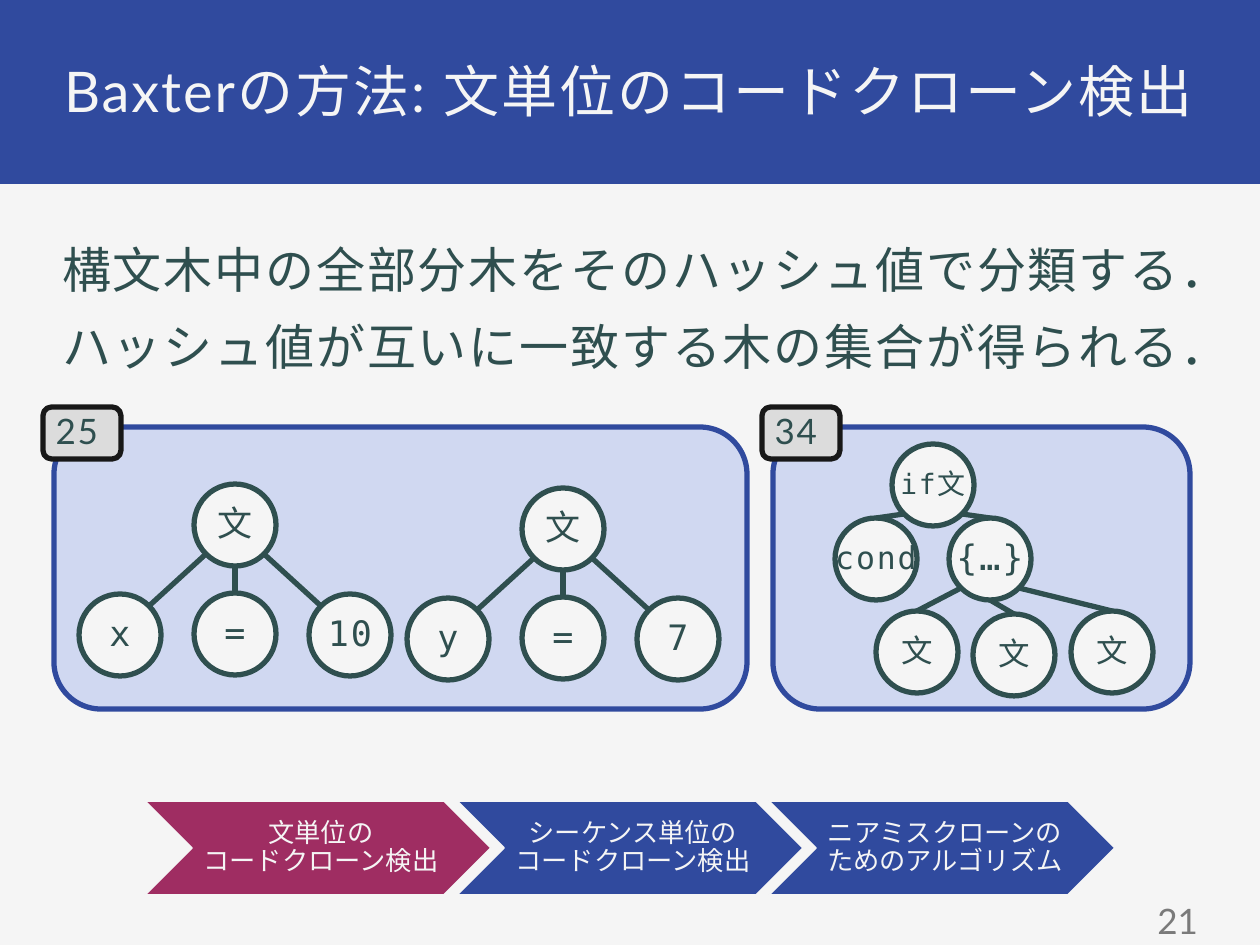
from dataclasses import dataclass

from lxml import etree
from pptx import Presentation
from pptx.dml.color import RGBColor
from pptx.enum import shapes, text
from pptx.oxml.ns import qn
from pptx.util import Emu, Pt

PX = 914400 / 126


@dataclass(frozen=True)
class Theme:
    paper: str = "F5F5F5"
    blue: str = "304A9E"
    panel: str = "D0D8F1"
    tag: str = "DCDCDC"
    tag_edge: str = "181818"
    ink: str = "2F4F4F"
    accent: str = "9F2D62"
    grey: str = "7A7A7A"
    sans: str = "Lato"
    mono: str = "DejaVu Sans Mono"
    title: int = 32
    body: int = 28
    label: int = 20
    step: int = 15


theme = Theme()
KIND = shapes.MSO_SHAPE
ALIGN = text.PP_ALIGN
ANCHOR = text.MSO_ANCHOR

deck = Presentation()
deck.slide_width, deck.slide_height = Emu(int(1260 * PX)), Emu(int(945 * PX))
page = deck.slides.add_slide(deck.slide_layouts[6])
page.background.fill.solid()
page.background.fill.fore_color.rgb = RGBColor.from_string(theme.paper)


def add_box(kind, area, fill=None, edge=None, weight=3):
    """Add a preset shape, or a text box when kind is None."""
    left, top, width, height = [Emu(round(v * PX)) for v in area]
    if kind is None:
        return page.shapes.add_textbox(left, top, width, height)
    box = page.shapes.add_shape(kind, left, top, width, height)
    box.shadow.inherit = False
    box.fill.solid()
    box.fill.fore_color.rgb = RGBColor.from_string(fill)
    if edge:
        box.line.color.rgb = RGBColor.from_string(edge)
        box.line.width = Pt(weight)
    else:
        box.line.fill.background()
    return box


def write(box, lines, size, color, font=theme.sans, align=ALIGN.LEFT, anchor=ANCHOR.MIDDLE,
          wrap=False, insets=(10, 10, 10, 10), before=0, leading=0.9, tracking=110):
    """Write one paragraph per line into the box."""
    frame = box.text_frame
    frame.word_wrap, frame.vertical_anchor = wrap, anchor
    (frame.margin_left, frame.margin_top,
     frame.margin_right, frame.margin_bottom) = [Emu(round(v * PX)) for v in insets]
    for index, line in enumerate(lines):
        para = frame.paragraphs[0] if index == 0 else frame.add_paragraph()
        para.text = line
        para.alignment, para.line_spacing = align, leading
        para.space_before = Pt(before)
        para.font.name, para.font.size = font, Pt(size)
        para.font.color.rgb = RGBColor.from_string(color)
        para._p.get_or_add_pPr().set("hangingPunct", "1")
        for span in para.runs:
            span._r.get_or_add_rPr().set("spc", str(tracking))


# Title band
add_box(KIND.RECTANGLE, (-2, -2, 1264, 186), theme.blue)
write(add_box(None, (54, 54, 1150, 74)), ["Baxterの方法: 文単位のコードクローン検出"],
      theme.title, theme.paper, align=ALIGN.JUSTIFY, anchor=ANCHOR.TOP, wrap=True,
      insets=(10, 10, 10, 8), before=16)

# Explanation
write(add_box(None, (54, 238, 1150, 653)),
      ["構文木中の全部分木をそのハッシュ値で分類する．",
       "ハッシュ値が互いに一致する木の集合が得られる．"],
      theme.body, theme.ink, anchor=ANCHOR.TOP, wrap=True, insets=(8, 8, 8, 8), before=14)

# Hash buckets, each with its value on the corner
for value, left, width in [("25", 54, 693), ("34", 773, 417)]:
    add_box(KIND.ROUNDED_RECTANGLE, (left, 427, width, 282), theme.panel, theme.blue)
    tag = add_box(KIND.ROUNDED_RECTANGLE, (left - 11, 407, 78, 52), theme.tag, theme.tag_edge)
    write(tag, [value], theme.label, theme.ink, before=3)

# Syntax trees: label, size, left, top, parent, side of parent, side of child
# Sides: -1 left diagonal, 0 middle, 1 right diagonal
NODE = 82
DIAGONAL = 29
trees = []
for name, number, left, top in [("x", "10", 194, 484), ("y", "7", 522, 488)]:
    trees.append([
        ("文", 20, left, top, None, 0, 0),
        (name, 20, left - 115, top + 110, 0, -1, 1),
        ("=", 20, left, top + 109, 0, 0, 0),
        (number, 20, left + 115, top + 110, 0, 1, -1),
    ])
trees.append([
    ("if文", 16, 892, 444, None, 0, 0),
    ("cond", 18, 835, 518, 0, -1, 0),
    ("{…}", 20, 949, 518, 0, 1, 0),
    ("文", 18, 876, 611, 2, -1, 0),
    ("文", 18, 973, 614, 2, 0, 0),
    ("文", 18, 1071, 611, 2, 1, 0),
])
for tree in trees:
    for label, size, left, top, *_ in tree:
        node = add_box(KIND.OVAL, (left, top, NODE, NODE), theme.paper, theme.ink)
        write(node, [label], size, theme.ink, theme.mono, ALIGN.CENTER, before=3)
    for _, _, left, top, parent, out, into in tree:
        if parent is None:
            continue
        ends = []
        for x, y, side, down in [(left, top, into, -1), (*tree[parent][2:4], out, 1)]:
            drop = DIAGONAL if side else NODE / 2
            ends += [x + NODE / 2 + side * DIAGONAL, y + NODE / 2 + down * drop]
        branch = page.shapes.add_connector(shapes.MSO_CONNECTOR.STRAIGHT,
                                           *[Emu(round(v * PX)) for v in ends])
        branch.line.color.rgb = RGBColor.from_string(theme.ink)
        branch.line.width = Pt(3)
        etree.SubElement(branch._element.spPr, qn("a:effectLst"))

# Progress chevrons
steps = [("文単位の\vコードクローン検出", theme.accent),
         ("シーケンス単位の\vコードクローン検出", theme.blue),
         ("ニアミスクローンのためのアルゴリズム", theme.blue)]
for index, (caption, color) in enumerate(steps):
    left = 145 + 312 * index
    add_box(KIND.CHEVRON, (left, 801, 346, 94), color, theme.paper, 1)
    write(add_box(None, (left + 47, 801, 252, 94)), [caption], theme.step, theme.paper,
          align=ALIGN.CENTER, wrap=True, insets=(9, 3, 3, 3), tracking=0)

# Page number
write(add_box(None, (922, 896, 284, 49)), ["21"], theme.label, theme.grey, align=ALIGN.RIGHT,
      wrap=True, insets=(8, 8, 8, 8), leading=1.0, tracking=0)

deck.save("out.pptx")
